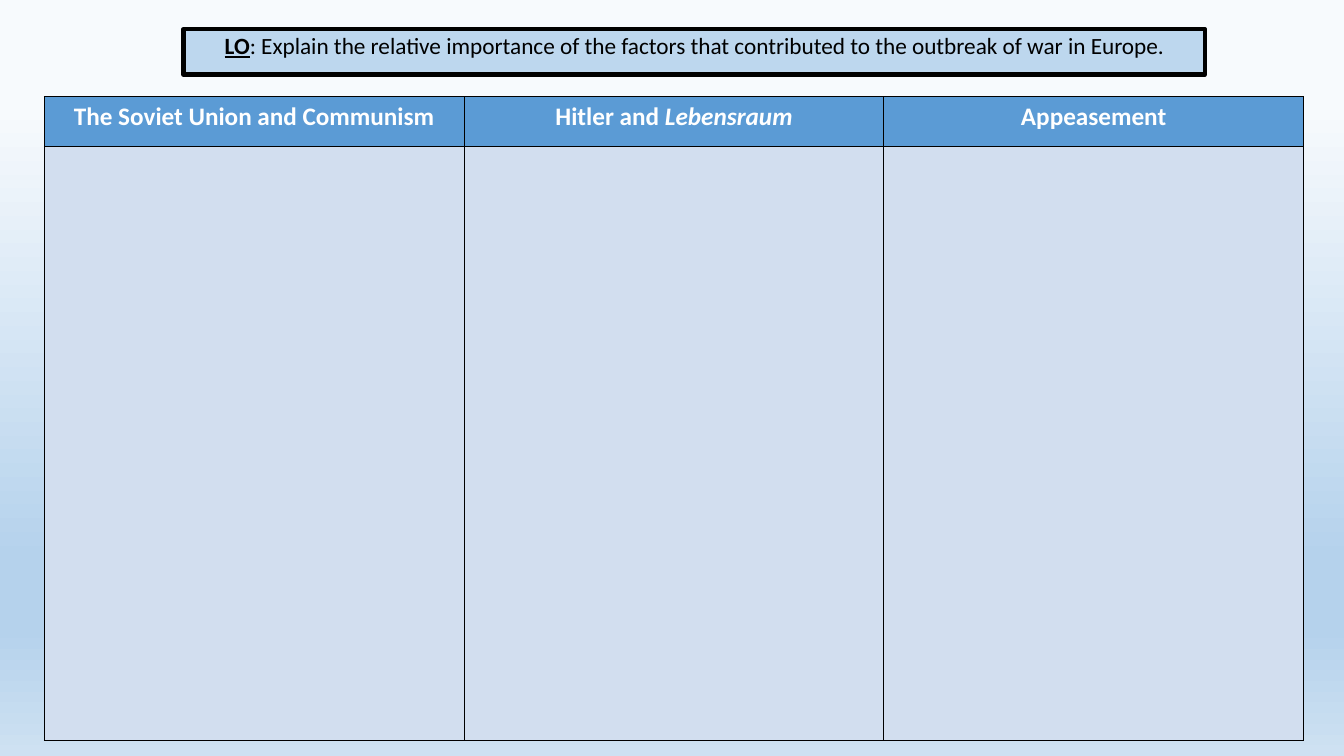
"""Build a slide with a learning objective above a three-factor comparison table."""
import copy
from dataclasses import dataclass

import pptx
import pptx.dml.color
import pptx.enum.shapes
import pptx.enum.text
import pptx.oxml
import pptx.oxml.ns
import pptx.util
from pptx.util import Inches

COLORS = {
    "black": "000000",
    "white": "FFFFFF",
    "header": "5B9BD5",
    "body": "D2DEEF",
    "objective": "BDD7EE",
}
BACKGROUND = [(0.14, "F7FAFD"), (0.74, "B5D2EC"), (0.83, "B5D2EC"), (1.0, "CEE1F2")]
ROW_HEIGHTS = [0.49, 5.9]
TABLE_LEFT, TABLE_TOP, TABLE_WIDTH = 0.44, 0.96, 12.49


@dataclass
class Run:
    text: str
    bold: bool = False
    italic: bool = False
    underline: bool = False


FACTORS = [
    [Run("The Soviet Union and Communism", bold=True)],
    [Run("Hitler and ", bold=True), Run("Lebensraum", bold=True, italic=True)],
    [Run("Appeasement", bold=True)],
]
OBJECTIVE = [
    Run("LO", bold=True, underline=True),
    Run(": Explain the relative importance of the factors that contributed "
        "to the outbreak of war in Europe."),
]


def rgb(name: str) -> pptx.dml.color.RGBColor:
    return pptx.dml.color.RGBColor.from_string(COLORS[name])


def write_text(tf, runs: list[Run], *, size: float, color: str,
               line_spacing: float = 1.0) -> None:
    p = tf.paragraphs[0]
    p.alignment = pptx.enum.text.PP_ALIGN.CENTER
    p.line_spacing = line_spacing
    for run in runs:
        r = p.add_run()
        r.text = run.text
        r.font.name = "Calibri"
        r.font.size = pptx.util.Pt(size)
        r.font.color.rgb = rgb(color)
        r.font.bold = run.bold
        r.font.italic = run.italic
        r.font.underline = run.underline


def paint_background(s) -> None:
    fill = s.background.fill
    fill.gradient()
    fill.gradient_angle = 270
    stops = s.element.find(".//" + pptx.oxml.ns.qn("a:gsLst"))
    for _ in range(len(BACKGROUND) - len(stops)):
        stops.append(copy.deepcopy(stops[0]))
    for stop, (position, color) in zip(fill.gradient_stops, BACKGROUND):
        stop.position = position
        stop.color.rgb = pptx.dml.color.RGBColor.from_string(color)


def style_cell(cell, fill: str) -> None:
    cell.fill.solid()
    cell.fill.fore_color.rgb = rgb(fill)
    tcPr = cell._tc.get_or_add_tcPr()
    for i, side in enumerate("LRTB"):
        tcPr.insert(i, pptx.oxml.parse_xml(
            f'<a:ln{side} {pptx.oxml.ns.nsdecls("a")} w="12700"><a:solidFill>'
            f'<a:srgbClr val="{COLORS["black"]}"/></a:solidFill></a:ln{side}>'))


def add_factor_table(s) -> None:
    frame = s.shapes.add_table(
        len(ROW_HEIGHTS), len(FACTORS), Inches(TABLE_LEFT), Inches(TABLE_TOP),
        Inches(TABLE_WIDTH), Inches(sum(ROW_HEIGHTS)))
    table = frame.table
    for row, height in zip(table.rows, ROW_HEIGHTS):
        row.height = Inches(height)
    for col, runs in enumerate(FACTORS):
        table.columns[col].width = Inches(TABLE_WIDTH / len(FACTORS))
        header = table.cell(0, col)
        style_cell(header, "header")
        write_text(header.text_frame, runs, size=18, color="white")
        style_cell(table.cell(1, col), "body")


def add_objective(s) -> None:
    sp = s.shapes.add_shape(
        pptx.enum.shapes.MSO_SHAPE.RECTANGLE,
        Inches(1.82), Inches(0.29), Inches(10.13), Inches(0.45))
    sp.shadow.inherit = False
    sp.fill.solid()
    sp.fill.fore_color.rgb = rgb("objective")
    sp.line.color.rgb = rgb("black")
    sp.line.width = pptx.util.Pt(3)
    tf = sp.text_frame
    tf.word_wrap = True
    tf.vertical_anchor = pptx.enum.text.MSO_ANCHOR.TOP
    write_text(tf, OBJECTIVE, size=16.6, color="black", line_spacing=0.9)


def main() -> None:
    prs = pptx.Presentation()
    prs.slide_width, prs.slide_height = Inches(13.33), Inches(7.5)
    s = prs.slides.add_slide(prs.slide_layouts[6])
    paint_background(s)
    add_factor_table(s)
    add_objective(s)
    prs.save("out.pptx")


if __name__ == "__main__":
    main()
